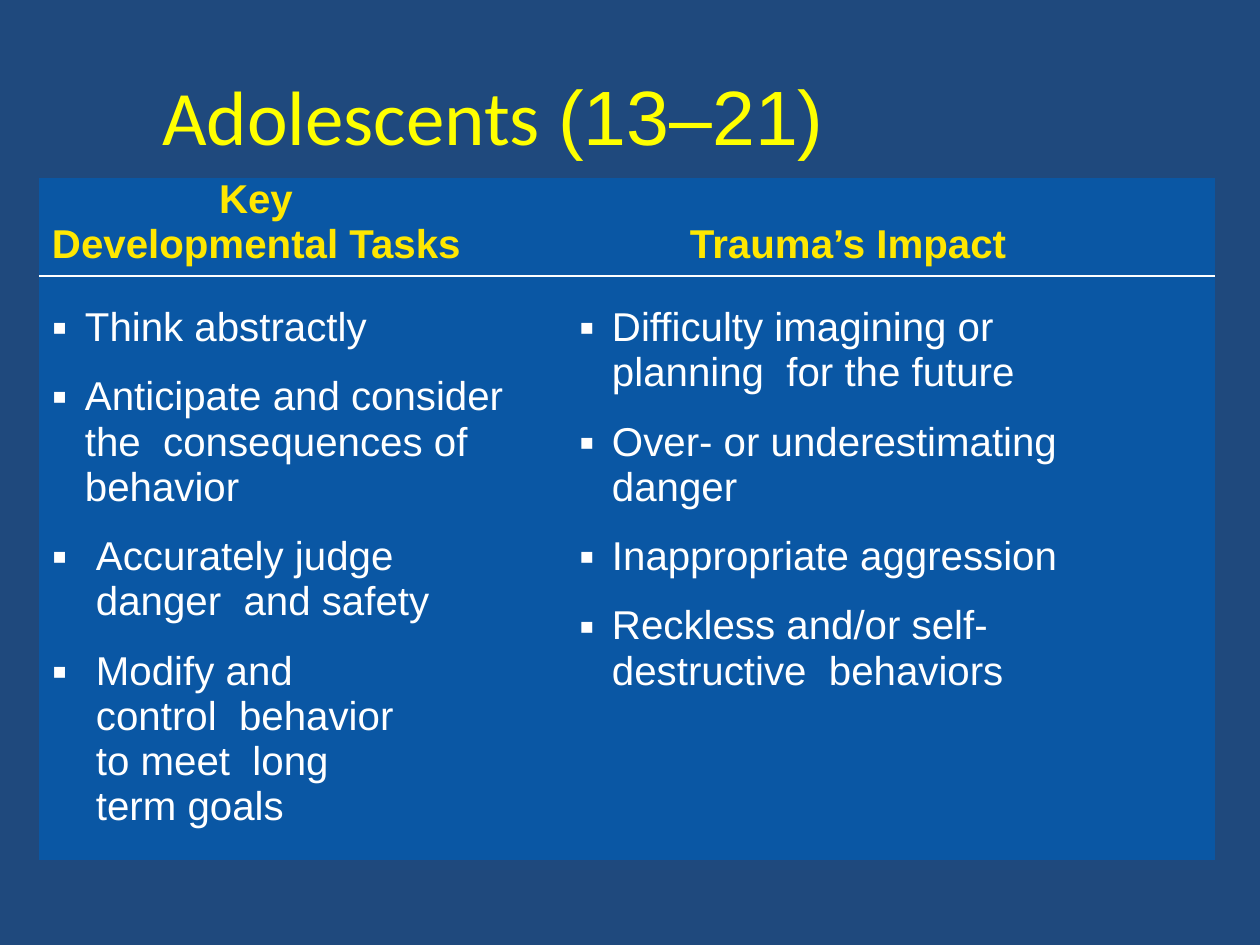
from dataclasses import dataclass

from lxml.etree import SubElement
from pptx import Presentation
from pptx.dml.color import RGBColor
from pptx.enum.text import MSO_ANCHOR, PP_ALIGN as Align
from pptx.oxml import parse_xml
from pptx.oxml.ns import nsdecls, qn
from pptx.util import Emu, Pt

PX_PER_INCH = 126
COLORS = {
    "background": "1F497D",
    "cell": "0A57A4",
    "title": "FFFF00",
    "heading": "FFE701",
    "body": "FFFFFF",
    "rule": "FFFFFF",
}


@dataclass(frozen=True)
class Line:
    text: str
    left: int
    right: int = 0
    hanging: int = 0
    spacing: float | None = None


@dataclass(frozen=True)
class Cell:
    lines: tuple[Line, ...]
    top: int
    color: str
    bold: bool = False
    rule_side: str = "T"
    gap: float = 0


def px(length: int) -> Emu:
    return Emu(round(length * 914400 / PX_PER_INCH))


def rgb(name: str) -> RGBColor:
    return RGBColor.from_string(COLORS[name])


def style_span(span, font: str, size: int, color: str, bold: bool = False) -> None:
    span.font.name = font
    span.font.size = Pt(size)
    span.font.bold = bold
    span.font.color.rgb = rgb(color)


def set_indent(para, line: Line) -> None:
    properties = para._p.get_or_add_pPr()
    properties.set("marL", str(px(line.left)))
    properties.set("marR", str(px(line.right)))
    properties.set("indent", str(-px(line.hanging)))
    if line.hanging:
        SubElement(properties, qn("a:buSzPct"), val="109000")
        SubElement(properties, qn("a:buFont"), typeface="Arial")
        SubElement(properties, qn("a:buChar"), char="▪")


def set_borders(cell, rule_side: str) -> None:
    properties = cell._tc.get_or_add_tcPr()
    for position, side in enumerate("LRTB"):
        paint = "<a:noFill/>"
        if side == rule_side:
            paint = f'<a:solidFill><a:srgbClr val="{COLORS["rule"]}"/></a:solidFill>'
        border = f'<a:ln{side} {nsdecls("a")} w="12700">{paint}</a:ln{side}>'
        properties.insert(position, parse_xml(border))


def draw_cell(cell, content: Cell) -> None:
    cell.margin_left = cell.margin_right = cell.margin_bottom = 0
    cell.margin_top = px(content.top)
    cell.vertical_anchor = MSO_ANCHOR.TOP
    cell.fill.solid()
    cell.fill.fore_color.rgb = rgb("cell")
    set_borders(cell, content.rule_side)
    cell.text_frame.text = "\n".join(line.text for line in content.lines)
    for index, (para, line) in enumerate(zip(cell.text_frame.paragraphs, content.lines)):
        if index:
            para.space_before = Pt(content.gap)
        if line.spacing:
            para.line_spacing = Pt(line.spacing)
        set_indent(para, line)
        for span in para.runs:
            style_span(span, "Arial", 23, content.color, content.bold)


def draw_title(page) -> None:
    box = page.shapes.add_textbox(px(42), px(68), px(902), px(94))
    frame = box.text_frame
    frame.word_wrap = True
    frame.margin_left = frame.margin_right = frame.margin_bottom = 0
    frame.margin_top = px(1)
    frame.text = "Adolescents "
    para = frame.paragraphs[0]
    para.alignment = Align.CENTER
    para.add_run().text = "(13–21)"
    for span, font in zip(para.runs, ("Calibri", "Arial")):
        style_span(span, font, 44, "title")


def draw_table(page, rows: tuple[tuple[Cell, ...], ...]) -> None:
    widths, heights = (524, 652), (98, 584)
    table = page.shapes.add_table(
        len(heights), len(widths), px(39), px(178), px(sum(widths)), px(sum(heights))
    ).table
    table.first_row = table.horz_banding = False
    for column, width in zip(table.columns, widths):
        column.width = px(width)
    for row, height, contents in zip(table.rows, heights, rows):
        row.height = px(height)
        for cell, content in zip(row.cells, contents):
            draw_cell(cell, content)


def task(text: str, left: int = 46, right: int = 0, hanging: int = 33) -> Line:
    return Line(text, left, right, hanging)


def impact(text: str) -> Line:
    return Line(text, 49, 115, 33)


def heading(top: int, *lines: Line) -> Cell:
    return Cell(lines, top, "heading", bold=True, rule_side="B")


def bullets(*lines: Line) -> Cell:
    return Cell(lines, 29, "body", gap=13.8)


ROWS = (
    (
        heading(0, Line("Key", 180, spacing=25.4), Line("Developmental Tasks", 13)),
        heading(44, Line("Trauma’s Impact", 127)),
    ),
    (
        bullets(
            task("Think abstractly"),
            task("Anticipate and consider the  consequences of behavior"),
            task("Accurately judge danger  and safety", 57, 83, 44),
            task("Modify and control  behavior to meet  long term goals", 57, 156, 44),
        ),
        bullets(
            impact("Difficulty imagining or planning  for the future"),
            impact("Over- or underestimating danger"),
            impact("Inappropriate aggression"),
            impact("Reckless and/or self-destructive  behaviors"),
        ),
    ),
)


def main() -> None:
    deck = Presentation()
    deck.slide_width, deck.slide_height = px(1260), px(945)
    page = deck.slides.add_slide(deck.slide_layouts[6])
    page.background.fill.solid()
    page.background.fill.fore_color.rgb = rgb("background")
    draw_title(page)
    draw_table(page, ROWS)
    deck.save("out.pptx")


if __name__ == "__main__":
    main()
